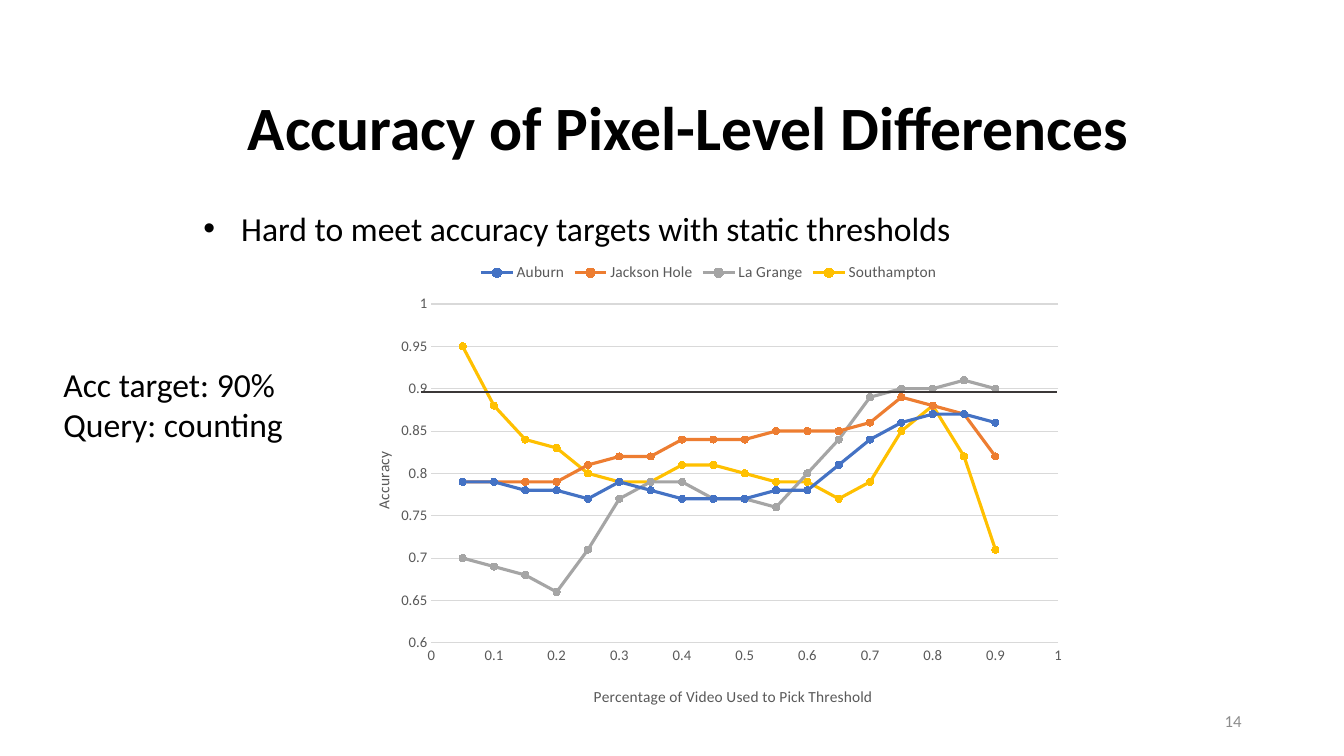
"""Build a slide on the accuracy of pixel-level differences."""
from dataclasses import dataclass

import lxml.etree
import pptx
import pptx.chart.axis
import pptx.chart.chart
import pptx.chart.data
import pptx.dml.color
import pptx.enum.chart
import pptx.enum.shapes
import pptx.enum.text
import pptx.oxml.ns
import pptx.slide
import pptx.util

Pt = pptx.util.Pt
RGB = pptx.dml.color.RGBColor.from_string
qn = pptx.oxml.ns.qn
Align = pptx.enum.text.PP_ALIGN
Anchor = pptx.enum.text.MSO_ANCHOR


@dataclass(frozen=True)
class Theme:
    face: str = "Calibri"
    ink: str = "000000"
    soft: str = "595959"
    faint: str = "8C8C8C"
    grid: str = "D9D9D9"
    goal: str = "3B3838"
    head: float = 44
    body: float = 24
    foot: float = 12
    label: float = 11
    tick: float = 10.5


THEME = Theme()


@dataclass(frozen=True)
class Label:
    lines: tuple[str, ...]
    box: tuple[float, float, float, float]
    size: float = THEME.body
    color: str = THEME.ink
    align: Align = Align.LEFT
    anchor: Anchor = Anchor.TOP
    bold: bool = False
    bullet: bool = False
    pitch: float = 1


@dataclass(frozen=True)
class Town:
    name: str
    color: str
    scores: tuple[float, ...]


@dataclass(frozen=True)
class Scale:
    title: str
    low: float
    step: float
    spot: tuple[float, ...]
    turn: int = 0


LABELS = (
    Label(("14",), (678, 500.4, 216, 28.8), THEME.foot, THEME.faint,
          Align.RIGHT, Anchor.MIDDLE),
    Label(("Accuracy of Pixel-Level Differences",), (78, 41, 828, 104.4), THEME.head,
          align=Align.CENTER, anchor=Anchor.MIDDLE, bold=True, pitch=0.9),
    Label(("Hard to meet accuracy targets with static thresholds",),
          (138.2, 144.7, 615.6, 36), bullet=True),
    Label(("Acc target: 90%", "Query: counting"), (38.2, 256.3, 172.8, 65.5)),
)

TOWNS = (
    Town("Auburn", "4472C4", (0.79, 0.79, 0.78, 0.78, 0.77, 0.79, 0.78, 0.77, 0.77,
                              0.77, 0.78, 0.78, 0.81, 0.84, 0.86, 0.87, 0.87, 0.86)),
    Town("Jackson Hole", "ED7D31", (0.79, 0.79, 0.79, 0.79, 0.81, 0.82, 0.82, 0.84, 0.84,
                                    0.84, 0.85, 0.85, 0.85, 0.86, 0.89, 0.88, 0.87, 0.82)),
    Town("La Grange", "A5A5A5", (0.7, 0.69, 0.68, 0.66, 0.71, 0.77, 0.79, 0.79, 0.77,
                                 0.77, 0.76, 0.8, 0.84, 0.89, 0.9, 0.9, 0.91, 0.9)),
    Town("Southampton", "FFC000", (0.95, 0.88, 0.84, 0.83, 0.8, 0.79, 0.79, 0.81, 0.81,
                                   0.8, 0.79, 0.79, 0.77, 0.79, 0.85, 0.88, 0.82, 0.71)),
)

SHARE = Scale("Percentage of Video Used to Pick Threshold", 0, 0.1, (0.34, 0.92))
SCORE = Scale("Accuracy", 0.6, 0.05, (0.04, 0.42), -90)


def style(font, size: float, color: str, bold: bool = False) -> None:
    """Set face, size, colour and weight of a font."""
    font.name, font.size, font.bold = THEME.face, Pt(size), bold
    font.color.rgb = RGB(color)


def write(slide: pptx.slide.Slide, label: Label) -> None:
    """Add one text box."""
    frame = slide.shapes.add_textbox(*map(Pt, label.box)).text_frame
    frame.word_wrap = True
    frame.vertical_anchor = label.anchor
    frame.text = "\n".join(label.lines)
    for para in frame.paragraphs:
        para.alignment = label.align
        para.line_spacing = label.pitch
        if label.bullet:
            props = para._p.get_or_add_pPr()
            props.set("marL", str(Pt(27)))
            props.set("indent", str(-Pt(27)))
            lxml.etree.SubElement(props, qn("a:buFont")).set("typeface", "Arial")
            lxml.etree.SubElement(props, qn("a:buChar")).set("char", "•")
        style(para.font, label.size, label.color, label.bold)


def place(part, spot: tuple[float, ...], inner: bool = False) -> None:
    """Fix a chart part at fractions of the chart area."""
    old = part.find(qn("c:layout"))
    if old is not None:
        part.remove(old)
    layout = lxml.etree.Element(qn("c:layout"))
    manual = lxml.etree.SubElement(layout, qn("c:manualLayout"))
    pairs = [("layoutTarget", "inner")] if inner else []
    pairs += [("xMode", "edge"), ("yMode", "edge")]
    pairs += [(key, str(num)) for key, num in zip("xywh", spot)]
    for key, value in pairs:
        lxml.etree.SubElement(manual, qn(f"c:{key}")).set("val", value)
    part.insert(0 if part.find(qn("c:tx")) is None else 1, layout)


def scale(axis: pptx.chart.axis.ValueAxis, plan: Scale) -> None:
    """Set range, ticks and title of an axis."""
    axis.minimum_scale, axis.maximum_scale = plan.low, 1
    axis.major_unit = plan.step
    none = pptx.enum.chart.XL_TICK_MARK.NONE
    axis.major_tick_mark = axis.minor_tick_mark = none
    axis.tick_labels.number_format = "General"
    axis.tick_labels.number_format_is_linked = False
    style(axis.tick_labels.font, THEME.tick, THEME.soft)
    frame = axis.axis_title.text_frame
    frame.text = plan.title
    style(frame.paragraphs[0].font, THEME.label, THEME.soft)
    frame._txBody.bodyPr.set("rot", str(plan.turn * 60000))
    frame._txBody.bodyPr.set("vert", "horz")
    place(axis.axis_title._element, plan.spot)


def rule(line) -> None:
    """Draw a thin grid-coloured line."""
    line.color.rgb = RGB(THEME.grid)
    line.width = Pt(0.75)


def plot(slide: pptx.slide.Slide) -> None:
    """Add the chart of accuracy by town."""
    data = pptx.chart.data.XyChartData()
    for town in TOWNS:
        row = data.add_series(town.name)
        for step, score in enumerate(town.scores, 1):
            row.add_data_point(round(step * 0.05, 2), score)
    kind = pptx.enum.chart.XL_CHART_TYPE.XY_SCATTER_SMOOTH
    box = map(Pt, (243.4, 180, 525.6, 334.8))
    chart = slide.shapes.add_chart(kind, *box, data).chart
    style(chart.font, THEME.label, THEME.soft)
    chart.has_title = False
    chart.has_legend = True
    chart.legend.position = pptx.enum.chart.XL_LEGEND_POSITION.TOP
    chart.legend.include_in_layout = False
    style(chart.legend.font, THEME.label, THEME.soft)
    chart.plots[0].vary_by_categories = False
    scale(chart.category_axis, SHARE)
    scale(chart.value_axis, SCORE)
    chart.category_axis.has_major_gridlines = False
    rule(chart.category_axis.format.line)
    rule(chart.value_axis.major_gridlines.format.line)
    chart.value_axis.format.line.fill.background()
    place(chart._chartSpace.chart.plotArea, (0.123, 0.111, 0.852, 0.723), True)
    for town, row in zip(TOWNS, chart.plots[0].series):
        row.smooth = True
        row.format.line.color.rgb = RGB(town.color)
        row.format.line.width = Pt(2.25)
        row.marker.style = pptx.enum.chart.XL_MARKER_STYLE.CIRCLE
        row.marker.size = 5
        row.marker.format.fill.solid()
        row.marker.format.fill.fore_color.rgb = RGB(town.color)
        row.marker.format.line.color.rgb = RGB(town.color)


def mark(slide: pptx.slide.Slide) -> None:
    """Draw the line of the accuracy target."""
    kind = pptx.enum.shapes.MSO_CONNECTOR.STRAIGHT
    line = slide.shapes.add_connector(kind, *map(Pt, (301, 280, 755.3, 280)))
    line.line.color.rgb = RGB(THEME.goal)
    line.line.width = Pt(1.5)
    lxml.etree.SubElement(line._element.spPr, qn("a:effectLst"))


def main() -> None:
    """Build and save the deck."""
    deck = pptx.Presentation()
    deck.slide_width, deck.slide_height = Pt(960), Pt(540)
    slide = deck.slides.add_slide(deck.slide_layouts[6])
    for label in LABELS:
        write(slide, label)
    plot(slide)
    mark(slide)
    deck.save("out.pptx")


if __name__ == "__main__":
    main()
